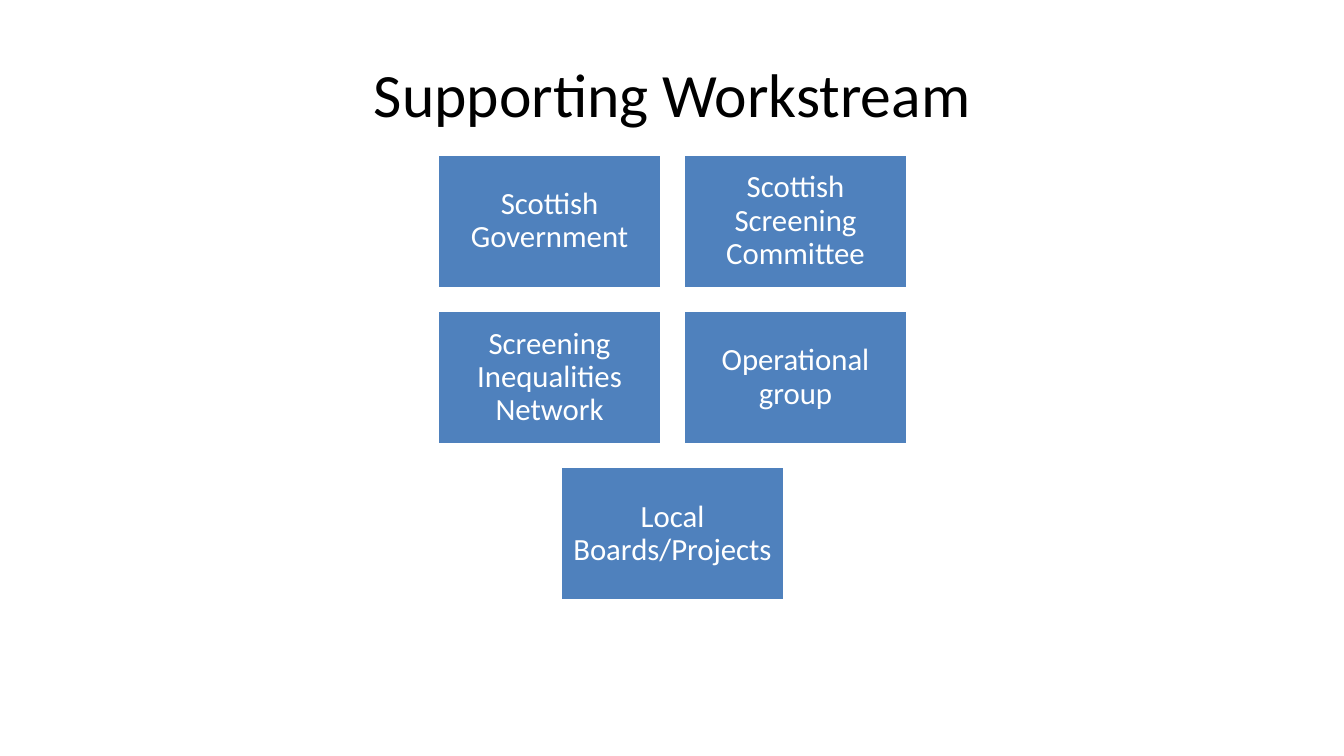
from dataclasses import dataclass

from pptx import Presentation
from pptx.dml.color import RGBColor
from pptx.enum.shapes import MSO_SHAPE
from pptx.enum.text import MSO_ANCHOR, MSO_AUTO_SIZE, PP_ALIGN
from pptx.slide import Slide
from pptx.text.text import TextFrame
from pptx.util import Pt

EMU_PER_PX = 9144  # 100 px to the inch


@dataclass(frozen=True)
class Theme:
    font: str = "Calibri"
    title_size: int = 44
    box_size: int = 22
    title_color: RGBColor = RGBColor(0x00, 0x00, 0x00)
    box_fill: RGBColor = RGBColor(0x4F, 0x81, 0xBD)
    white: RGBColor = RGBColor(0xFF, 0xFF, 0xFF)


@dataclass(frozen=True)
class GroupBox:
    label: str
    left: int
    top: int


THEME = Theme()
PAGE_WIDTH, PAGE_HEIGHT = 1333, 750
BOX_WIDTH, BOX_HEIGHT = 222, 133
GAP = 22
FIRST_ROW_TOP = 153
ROWS = (
    ("Scottish Government", "Scottish Screening Committee"),
    ("Screening Inequalities Network", "Operational group"),
    ("Local Boards/Projects",),
)


def px(length: int) -> int:
    return length * EMU_PER_PX


def write_text(frame: TextFrame, text: str, *, size: int, color: RGBColor,
               inset: int, line_spacing: float = 1.0) -> None:
    frame.word_wrap = True
    frame.auto_size = MSO_AUTO_SIZE.NONE
    frame.vertical_anchor = MSO_ANCHOR.MIDDLE
    frame.margin_left = frame.margin_right = px(inset)
    frame.margin_top = frame.margin_bottom = px(inset)
    para = frame.paragraphs[0]
    para.alignment = PP_ALIGN.CENTER
    para.line_spacing = line_spacing
    span = para.add_run()
    span.text = text
    span.font.name = THEME.font
    span.font.size = Pt(size)
    span.font.color.rgb = color


def place_boxes() -> list[GroupBox]:
    """Centre each row on the page, with the same gap across and down."""
    boxes = []
    for row, labels in enumerate(ROWS):
        row_width = len(labels) * (BOX_WIDTH + GAP) - GAP
        row_left = (PAGE_WIDTH - row_width + 1) // 2
        for column, label in enumerate(labels):
            boxes.append(GroupBox(label, row_left + column * (BOX_WIDTH + GAP),
                                  FIRST_ROW_TOP + row * (BOX_HEIGHT + GAP)))
    return boxes


def draw_title(page: Slide) -> None:
    title = page.shapes.title
    title.left, title.top = px(67), px(30)
    title.width, title.height = px(1200), px(125)
    write_text(title.text_frame, "Supporting Workstream",
               size=THEME.title_size, color=THEME.title_color, inset=5)


def draw_box(page: Slide, box: GroupBox) -> None:
    shape = page.shapes.add_shape(MSO_SHAPE.RECTANGLE, px(box.left), px(box.top),
                                  px(BOX_WIDTH), px(BOX_HEIGHT))
    shape.shadow.inherit = False
    shape.fill.solid()
    shape.fill.fore_color.rgb = THEME.box_fill
    shape.line.color.rgb = THEME.white
    shape.line.width = Pt(2)
    write_text(shape.text_frame, box.label, size=THEME.box_size,
               color=THEME.white, inset=9, line_spacing=0.9)


def main() -> None:
    deck = Presentation()
    deck.slide_width, deck.slide_height = px(PAGE_WIDTH), px(PAGE_HEIGHT)
    page = deck.slides.add_slide(deck.slide_layouts.get_by_name("Title Only"))
    draw_title(page)
    for box in place_boxes():
        draw_box(page, box)
    deck.save("out.pptx")


if __name__ == "__main__":
    main()
